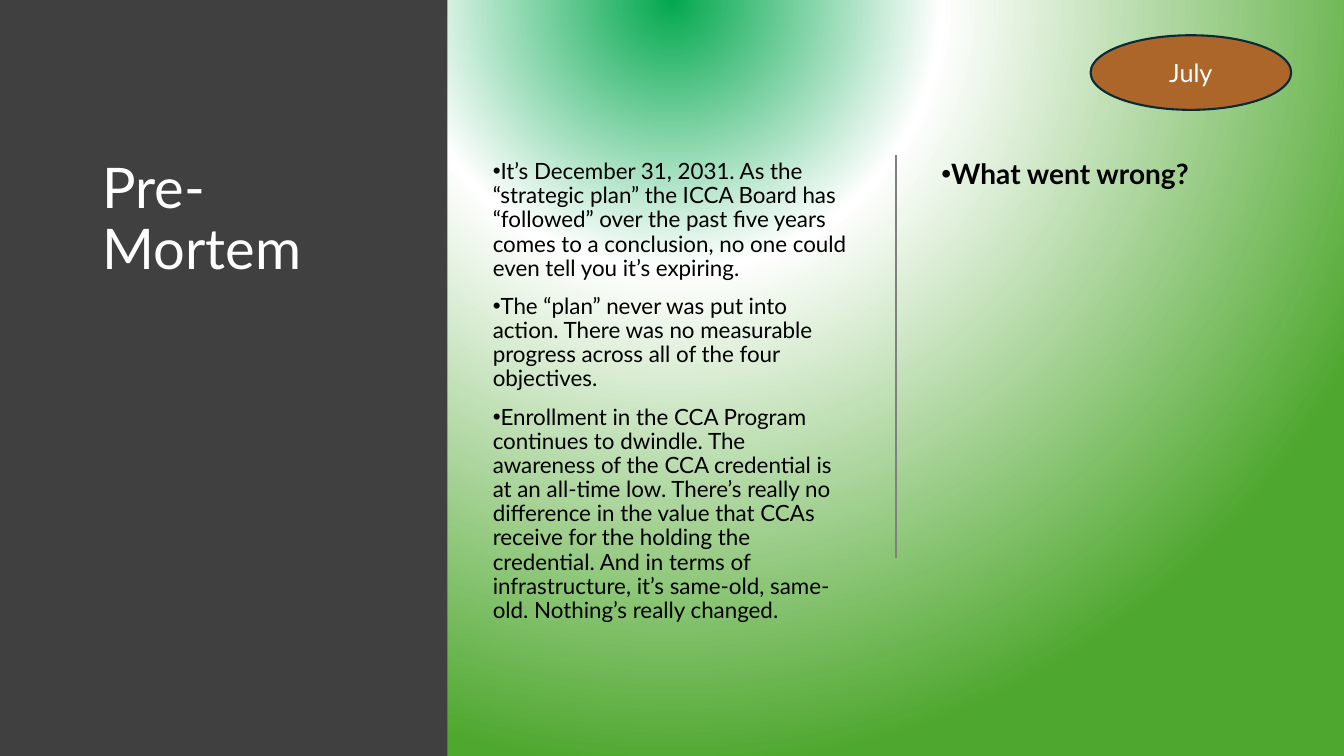
"""Build the Pre-Mortem slide with a green radial background."""
import pptx
import pptx.dml.color
import pptx.enum.shapes
import pptx.enum.text
import pptx.oxml
import pptx.oxml.ns
import pptx.util

Pt = pptx.util.Pt
ANCHOR = pptx.enum.text.MSO_ANCHOR
SHAPES = pptx.enum.shapes.MSO_SHAPE


def color(hex_value):
    return pptx.dml.color.RGBColor.from_string(hex_value)


def write(shape, texts, size, hex_value, bullet=False, bold=False, **formats):
    shape.text_frame.word_wrap = True
    for index, text in enumerate(texts):
        paragraphs = shape.text_frame.paragraphs
        paragraph = shape.text_frame.add_paragraph() if index else paragraphs[0]
        paragraph.text = text
        for name, value in formats.items():
            if index or name != "space_before":
                setattr(paragraph, name, value)
        if bullet:
            properties = paragraph._p.get_or_add_pPr()
            properties.set("marL", "0")
            properties.set("indent", str(-Pt(18)))
            properties.append(pptx.oxml.parse_xml(
                f'<a:buFont {pptx.oxml.ns.nsdecls("a")} typeface="Arial"/>'))
            properties.append(pptx.oxml.parse_xml(
                f'<a:buChar {pptx.oxml.ns.nsdecls("a")} char="•"/>'))
        font = paragraph.runs[0].font
        for name, value in {"name": "Lato", "size": Pt(size), "bold": bold}.items():
            setattr(font, name, value)
        font.color.rgb = color(hex_value)


presentation = pptx.Presentation()
presentation.slide_width = Pt(960)
presentation.slide_height = Pt(540)
slide = presentation.slides.add_slide(presentation.slide_layouts[6])

slide.background.fill.solid()
background = slide.element.find(".//" + pptx.oxml.ns.qn("p:bgPr"))
stops = "".join(
    f'<a:gs pos="{position * 1000}"><a:srgbClr val="{value}"/></a:gs>'
    for position, value in [(0, "03A84E"), (35, "FFFFFF"), (100, "4EA72E")])
background.replace(background[0], pptx.oxml.parse_xml(
    f'<a:gradFill {pptx.oxml.ns.nsdecls("a")} rotWithShape="1"><a:gsLst>{stops}</a:gsLst>'
    '<a:path path="circle"><a:fillToRect l="50000" t="-80000" r="50000" b="180000"/>'
    '</a:path></a:gradFill>'))

BODY_TOP, BODY_HEIGHT = 110.9, 343.4

panel = slide.shapes.add_shape(SHAPES.RECTANGLE, 0, 0, Pt(319.7), Pt(540))
panel.shadow.inherit = False
panel.fill.solid()
panel.fill.fore_color.rgb = color("404040")
panel.line.fill.background()

title = slide.shapes.add_textbox(Pt(66.2), Pt(BODY_TOP), Pt(228.2), Pt(BODY_HEIGHT))
title.text_frame.margin_right = Pt(14.4)
write(title, ["Pre-Mortem"], 40, "FFFFFF", line_spacing=0.9)

story = slide.shapes.add_textbox(Pt(344.9), Pt(BODY_TOP), Pt(270), Pt(BODY_HEIGHT))
write(story, [
    "It’s December 31, 2031. As the “strategic plan” the ICCA Board has “followed” "
    "over the past five years comes to a conclusion, no one could even tell you "
    "it’s expiring.",
    "The “plan” never was put into action. There was no measurable progress across "
    "all of the four objectives.",
    "Enrollment in the CCA Program continues to dwindle. The awareness of the CCA "
    "credential is at an all-time low. There’s really no difference in the value "
    "that CCAs receive for the holding the credential. And in terms of "
    "infrastructure, it’s same-old, same-old. Nothing’s really changed.",
], 16, "000000", bullet=True, line_spacing=0.9, space_before=Pt(10))

divider = slide.shapes.add_connector(
    pptx.enum.shapes.MSO_CONNECTOR.STRAIGHT, Pt(640), Pt(BODY_TOP), Pt(640), Pt(398.9))
divider.line.color.rgb = color("808080")
divider.line.width = Pt(1)
divider._element.spPr.append(
    pptx.oxml.parse_xml(f'<a:effectLst {pptx.oxml.ns.nsdecls("a")}/>'))

question = slide.shapes.add_textbox(Pt(665.3), Pt(BODY_TOP), Pt(252), Pt(BODY_HEIGHT))
write(question, ["What went wrong?"], 20, "000000", bullet=True, bold=True,
      line_spacing=0.9, space_after=Pt(6))

month = slide.shapes.add_shape(SHAPES.OVAL, Pt(779), Pt(25.2), Pt(143.3), Pt(53.3))
month.shadow.inherit = False
month.fill.solid()
month.fill.fore_color.rgb = color("AC6629")
month.line.color.rgb = color("092A39")
month.line.width = Pt(1.5)
month.text_frame.vertical_anchor = ANCHOR.MIDDLE
write(month, ["July"], 18, "FFFFFF", alignment=pptx.enum.text.PP_ALIGN.CENTER)

presentation.save("out.pptx")
